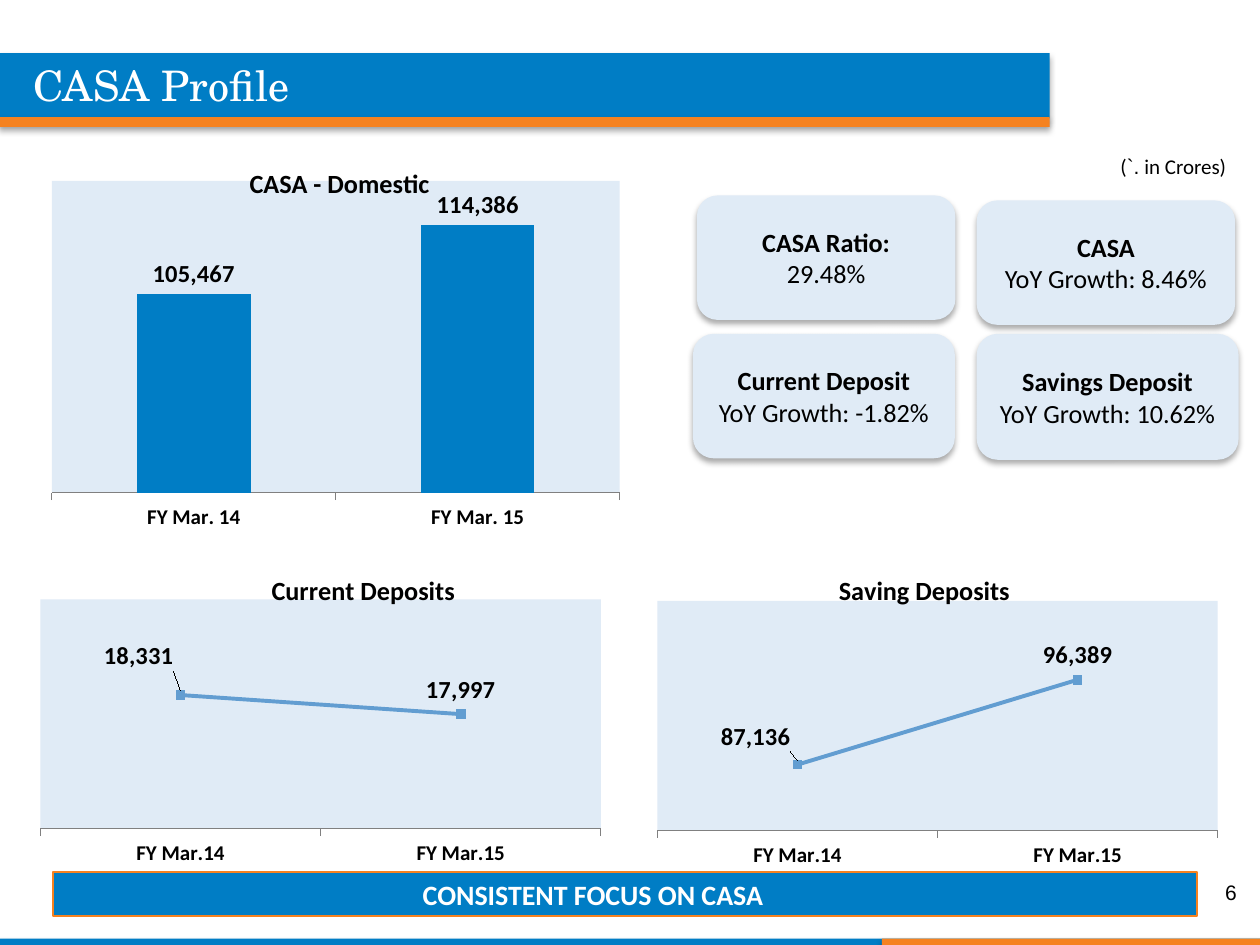
from lxml import etree
from pptx import Presentation
from pptx.chart.data import CategoryChartData
from pptx.dml.color import RGBColor
from pptx.enum.chart import XL_CHART_TYPE, XL_LABEL_POSITION, XL_MARKER_STYLE, XL_TICK_MARK
from pptx.enum.shapes import MSO_SHAPE
from pptx.enum.text import MSO_ANCHOR, PP_ALIGN
from pptx.oxml import parse_xml
from pptx.oxml.ns import nsdecls, qn
from pptx.util import Cm, Pt

BLUE = RGBColor(0x00, 0x7D, 0xC5)
ORANGE = RGBColor(0xF5, 0x82, 0x20)
PALE = RGBColor(0xE0, 0xEB, 0xF6)
SKY = RGBColor(0x62, 0x9D, 0xD1)
GREY = RGBColor(0x80, 0x80, 0x80)
BLACK = RGBColor(0, 0, 0)
WHITE = RGBColor(255, 255, 255)
RECT, ROUND = MSO_SHAPE.RECTANGLE, MSO_SHAPE.ROUNDED_RECTANGLE
LEFT, MID, RIGHT = PP_ALIGN.LEFT, PP_ALIGN.CENTER, PP_ALIGN.RIGHT
COLS, LINE = XL_CHART_TYPE.COLUMN_CLUSTERED, XL_CHART_TYPE.LINE_MARKERS
ABOVE, OUTER = XL_LABEL_POSITION.ABOVE, XL_LABEL_POSITION.OUTSIDE_END
SQUARE = XL_MARKER_STYLE.SQUARE
OUT, NONE = XL_TICK_MARK.OUTSIDE, XL_TICK_MARK.NONE
MIDDLE = MSO_ANCHOR.MIDDLE
SHADOW = (f'<a:effectLst {nsdecls("a")}><a:outerShdw blurRad="44450" dist="27940" '
          'dir="5400000" algn="ctr" rotWithShape="0"><a:srgbClr val="000000">'
          '<a:alpha val="32000"/></a:srgbClr></a:outerShdw></a:effectLst>')

prs = Presentation()
prs.slide_width, prs.slide_height = Cm(25.4), Cm(19.05)
slide = prs.slides.add_slide(prs.slide_layouts[6])


def block(kind, box, fill, shade=True):
    """Add a filled shape, with a soft shadow below it if wanted."""
    shape = slide.shapes.add_shape(kind, *map(Cm, box))
    shape.fill.solid()
    shape.fill.fore_color.rgb = fill
    shape.line.fill.background()
    shape.shadow.inherit = False
    if shade:
        props = shape._element.spPr
        props.replace(props.find(qn("a:effectLst")), parse_xml(SHADOW))
    return shape


def layout(node, index, **sizes):
    """Give a chart part a manual layout."""
    for old in node.findall(qn("c:layout")):
        node.remove(old)
    outer = etree.Element(qn("c:layout"))
    manual = etree.SubElement(outer, qn("c:manualLayout"))
    for name, value in sizes.items():
        etree.SubElement(manual, qn("c:" + name)).set("val", str(value))
    node.insert(index, outer)


# Header and footer bands
for box, fill in [
    ((0, 18.92, 25.4, 0.13), BLUE),
    ((17.78, 18.92, 7.62, 0.13), ORANGE),
    ((0, 1.07, 21.16, 1.32), BLUE),
    ((0, 2.36, 21.16, 0.2), ORANGE),
]:
    block(RECT, box, fill)
strip = block(RECT, (1.07, 17.58, 23.06, 0.89), BLUE, False)
strip.line.color.rgb = ORANGE
strip.line.width = Pt(0.75)

# Charts: title spot, plot area and shift of the first label are chart fractions
for kind, name, cats, vals, box, low, high, step, spot, plot, shift in [
    (COLS, "CASA - Domestic", ("FY Mar. 14", "FY Mar. 15"), (105467, 114386),
     (0.64, 2.74, 12.27, 8.26), 80000, 120000, 10000,
     (0.35, 0.06), (0.033, 0.11, 0.933, 0.761), None),
    (LINE, "Saving Deposits", ("FY Mar.14", "FY Mar.15"), (87136, 96389),
     (12.83, 10.44, 12.07, 7.14), 80000, 105000, 5000,
     (0.33, 0.14), (0.035, 0.234, 0.936, 0.648), (-0.07, -0.01)),
    (LINE, "Current Deposits", ("FY Mar.14", "FY Mar.15"), (18331, 17997),
     (0.43, 10.59, 12.07, 7.14), 16000, 20000, 1000,
     (0.41, 0.12), (0.032, 0.209, 0.936, 0.648), (-0.07, -0.04)),
]:
    data = CategoryChartData(number_format="#,##0")
    data.categories = cats
    data.add_series(name, vals)
    chart = slide.shapes.add_chart(kind, *map(Cm, box), data).chart
    chart.has_legend = False
    chart.font.name, chart.font.size = "Calibri", Pt(18)
    chart.font.color.rgb = BLACK

    # Title
    chart.has_title = True
    title = chart.chart_title
    title.text_frame.text = name
    font = title.text_frame.paragraphs[0].runs[0].font
    font.name, font.size, font.bold = "Calibri", Pt(15), True
    font.color.rgb = BLACK
    layout(title._element, 1, xMode="edge", yMode="edge", x=spot[0], y=spot[1])

    # Axes
    axis = chart.value_axis
    axis.minimum_scale, axis.maximum_scale, axis.major_unit = low, high, step
    axis.has_major_gridlines = False
    axis.visible = False
    axis = chart.category_axis
    axis.major_tick_mark, axis.minor_tick_mark = OUT, NONE
    axis.format.line.color.rgb = GREY
    axis.tick_labels.font.size, axis.tick_labels.font.bold = Pt(12), True

    # Clear chart ground, pale plot area
    space = chart._chartSpace
    space.find(qn("c:chart")).addnext(parse_xml(
        f'<c:spPr {nsdecls("c", "a")}><a:noFill/><a:ln><a:noFill/></a:ln></c:spPr>'))
    area = space.chart.plotArea
    layout(area, 0, layoutTarget="inner", xMode="edge", yMode="edge",
           **dict(zip("xywh", plot)))
    area.append(parse_xml(
        f'<c:spPr {nsdecls("c", "a")}><a:solidFill><a:srgbClr val="{PALE}"/>'
        '</a:solidFill></c:spPr>'))

    # Series and value labels
    body = chart.plots[0]
    body.vary_by_categories = False
    series = body.series[0]
    labels = series.data_labels
    labels.show_value = True
    labels.number_format, labels.number_format_is_linked = "#,##0", False
    labels.position = OUTER if kind == COLS else ABOVE
    labels.font.size, labels.font.bold = Pt(14), True
    labels.font.color.rgb = BLACK
    if kind == COLS:
        body.gap_width = 150
        series.format.fill.solid()
        series.format.fill.fore_color.rgb = BLUE
        continue
    series.smooth = False
    series.format.line.color.rgb = SKY
    series.format.line.width = Pt(2.25)
    series.marker.style, series.marker.size = SQUARE, 5
    for mark, tone in ((series.marker, SKY), (series.points[1].marker, BLUE)):
        mark.style, mark.size = SQUARE, 5
        mark.format.fill.solid()
        mark.format.fill.fore_color.rgb = tone
        mark.format.line.color.rgb = tone
    label = series.points[0].data_label
    label.font.size, label.font.bold = Pt(14), True
    label.font.color.rgb = BLACK
    label.position = ABOVE
    layout(labels._element.find(qn("c:dLbl")), 1, x=shift[0], y=shift[1])

# Key figure cards
for box, head, fact in [
    ((19.69, 6.73, 5.28, 2.54), "Savings Deposit", "YoY Growth: 10.62%"),
    ((13.97, 6.73, 5.28, 2.51), "Current Deposit", "YoY Growth: -1.82%"),
    ((19.69, 4.04, 5.21, 2.51), "CASA", "YoY Growth: 8.46%"),
    ((14.05, 3.94, 5.21, 2.51), "CASA Ratio:", "29.48%"),
]:
    frame = block(ROUND, box, PALE).text_frame
    frame.word_wrap = True
    frame.vertical_anchor = MIDDLE
    frame.text = f"{head}\n{fact}"
    for para, bold in zip(frame.paragraphs, (True, False)):
        para.alignment = MID
        font = para.runs[0].font
        font.name, font.size, font.bold = "Calibri", Pt(15), bold
        font.color.rgb = BLACK

# Text lines
for box, parts, size, tone, side, bold in [
    ((0.43, 1.07, 17.15, 1.27), [("CASA Profile", "TeX Gyre Schola")], 24, WHITE, LEFT, False),
    ((19.26, 17.48, 5.92, 1.02), [("6", "Arial")], 12, BLACK, RIGHT, False),
    ((21.16, 2.97, 3.81, 0.76),
     [("(", "Calibri"), ("`.", "Arial"), (" in Crores)", "Calibri")], 12, BLACK, RIGHT, False),
    ((4.65, 17.55, 14.61, 0.94), [("CONSISTENT FOCUS ON CASA", "Calibri")], 16, WHITE, MID, True),
]:
    frame = slide.shapes.add_textbox(*map(Cm, box)).text_frame
    frame.word_wrap = True
    frame.vertical_anchor = MIDDLE
    para = frame.paragraphs[0]
    para.alignment = side
    for text, face in parts:
        run = para.add_run()
        run.text = text
        run.font.name, run.font.size, run.font.bold = face, Pt(size), bold
        run.font.color.rgb = tone

prs.save("out.pptx")
